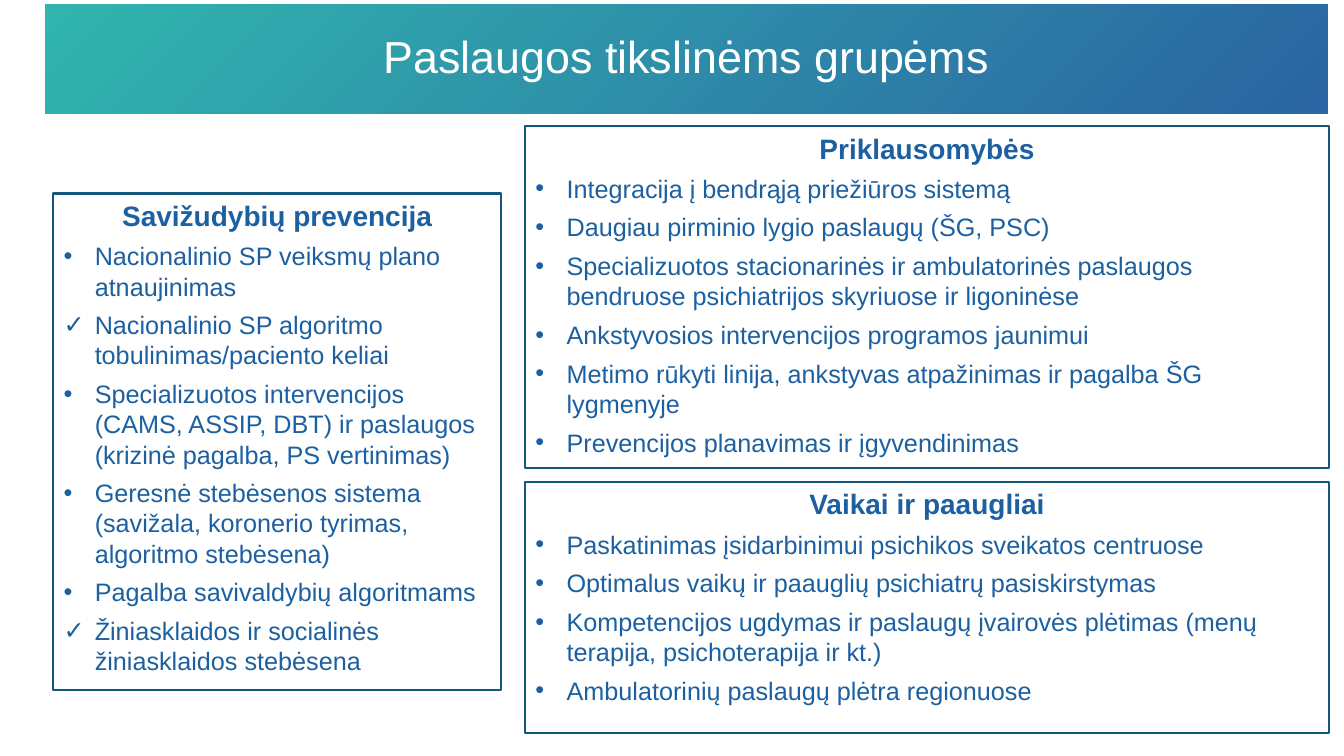
from dataclasses import dataclass

from pptx import Presentation
from pptx.dml.color import RGBColor
from pptx.enum.text import MSO_ANCHOR, MSO_AUTO_SIZE, PP_ALIGN
from pptx.oxml import parse_xml
from pptx.oxml.ns import nsdecls, qn
from pptx.oxml.xmlchemy import OxmlElement
from pptx.shapes.placeholder import SlidePlaceholder
from pptx.slide import Slide
from pptx.text.text import _Paragraph as Paragraph
from pptx.util import Inches, Length, Pt


@dataclass(frozen=True)
class Theme:
    font: str = "Arial"
    paper: RGBColor = RGBColor.from_string("FEFFFE")
    text: RGBColor = RGBColor.from_string("1D60A1")
    border: RGBColor = RGBColor.from_string("15587D")
    banner_start: RGBColor = RGBColor.from_string("31B5AE")
    banner_end: RGBColor = RGBColor.from_string("2A64A2")
    title_size: Length = Pt(32)
    heading_size: Length = Pt(20)
    item_size: Length = Pt(18)
    border_width: Length = Pt(1.5)
    paragraph_gap: Length = Pt(6)
    hanging: Length = Inches(0.31)


@dataclass(frozen=True)
class Area:
    left: float
    top: float
    width: float
    height: float


@dataclass(frozen=True)
class Item:
    text: str
    mark: str = "•"


@dataclass(frozen=True)
class TargetGroup:
    heading: str
    area: Area
    items: tuple[Item, ...]
    filled: bool = False


THEME = Theme()
TITLE = "Paslaugos tikslinėms grupėms"
TITLE_AREA = Area(0.45, 0.04, 12.72, 1.09)
DONE = "✓"

TARGET_GROUPS = (
    TargetGroup("Savižudybių prevencija", Area(0.53, 1.92, 4.44, 4.93), (
        Item("Nacionalinio SP veiksmų plano atnaujinimas"),
        Item("Nacionalinio SP algoritmo tobulinimas/paciento keliai", DONE),
        Item("Specializuotos intervencijos (CAMS, ASSIP, DBT) ir paslaugos "
             "(krizinė pagalba, PS vertinimas)"),
        Item("Geresnė stebėsenos sistema (savižala, koronerio tyrimas, "
             "algoritmo stebėsena)"),
        Item("Pagalba savivaldybių algoritmams"),
        Item("Žiniasklaidos ir socialinės žiniasklaidos stebėsena", DONE),
    )),
    TargetGroup("Priklausomybės", Area(5.21, 1.25, 7.97, 3.39), (
        Item("Integracija į bendrąją priežiūros sistemą"),
        Item("Daugiau pirminio lygio paslaugų (ŠG, PSC)"),
        Item("Specializuotos stacionarinės ir ambulatorinės paslaugos "
             "bendruose psichiatrijos skyriuose ir ligoninėse"),
        Item("Ankstyvosios intervencijos programos jaunimui"),
        Item("Metimo rūkyti linija, ankstyvas atpažinimas ir pagalba ŠG lygmenyje"),
        Item("Prevencijos planavimas ir įgyvendinimas"),
    )),
    TargetGroup("Vaikai ir paaugliai", Area(5.21, 4.78, 7.97, 2.49), (
        Item("Paskatinimas įsidarbinimui psichikos sveikatos centruose"),
        Item("Optimalus vaikų ir paauglių psichiatrų pasiskirstymas"),
        Item("Kompetencijos ugdymas ir paslaugų įvairovės plėtimas "
             "(menų terapija, psichoterapija ir kt.)"),
        Item("Ambulatorinių paslaugų plėtra regionuose"),
    ), filled=True),
)


def place(placeholder: SlidePlaceholder, area: Area, anchor: MSO_ANCHOR) -> None:
    placeholder.left, placeholder.top = Inches(area.left), Inches(area.top)
    placeholder.width, placeholder.height = Inches(area.width), Inches(area.height)
    frame = placeholder.text_frame
    frame.word_wrap = True
    frame.auto_size = MSO_AUTO_SIZE.NONE
    frame.vertical_anchor = anchor


def format_runs(paragraph: Paragraph, size: Length, color: RGBColor,
                bold: bool = False) -> None:
    for run in paragraph.runs:
        run.font.name = THEME.font
        run.font.size = size
        run.font.bold = bold
        run.font.color.rgb = color


def set_bullet(paragraph: Paragraph, mark: str = "") -> None:
    """Give the paragraph a hanging mark, or no mark and no indent."""
    properties = paragraph._p.get_or_add_pPr()
    hanging = THEME.hanging if mark else 0
    properties.set("marL", str(hanging))
    properties.set("indent", str(-hanging))
    bullet = OxmlElement("a:buChar" if mark else "a:buNone")
    if mark:
        bullet.set("char", mark)
    properties.append(bullet)


def fill_banner(banner: SlidePlaceholder) -> None:
    """Fill with a gradient that spreads from the top left corner."""
    banner.fill.gradient()
    start, end = banner.fill.gradient_stops
    start.position, end.position = 0, 1
    start.color.rgb, end.color.rgb = THEME.banner_start, THEME.banner_end
    gradient = banner._element.spPr.find(qn("a:gradFill"))
    gradient.replace(gradient.find(qn("a:lin")), parse_xml(
        f'<a:path {nsdecls("a")} path="circle">'
        '<a:fillToRect r="100000" b="100000"/></a:path>'))


def draw_title(title: SlidePlaceholder) -> None:
    place(title, TITLE_AREA, MSO_ANCHOR.MIDDLE)
    fill_banner(title)
    title.text_frame.text = TITLE
    line = title.text_frame.paragraphs[0]
    line.alignment = PP_ALIGN.CENTER
    line.line_spacing = 0.9
    format_runs(line, THEME.title_size, THEME.paper)


def draw_group(body: SlidePlaceholder, group: TargetGroup) -> None:
    place(body, group.area, MSO_ANCHOR.TOP)
    body.line.color.rgb = THEME.border
    body.line.width = THEME.border_width
    if group.filled:
        body.fill.solid()
        body.fill.fore_color.rgb = THEME.paper
    else:
        body.fill.background()

    frame = body.text_frame
    frame.text = "\n".join([group.heading, *(item.text for item in group.items)])
    for paragraph in frame.paragraphs:
        paragraph.space_before = Pt(0)
        paragraph.space_after = THEME.paragraph_gap
    heading, *lines = frame.paragraphs
    heading.alignment = PP_ALIGN.CENTER
    set_bullet(heading)
    format_runs(heading, THEME.heading_size, THEME.text, bold=True)
    for line, item in zip(lines, group.items):
        line.alignment = PP_ALIGN.LEFT
        set_bullet(line, item.mark)
        format_runs(line, THEME.item_size, THEME.text)


def draw_slide(slide: Slide) -> None:
    slide.background.fill.solid()
    slide.background.fill.fore_color.rgb = THEME.paper
    title, *bodies = slide.placeholders
    draw_title(title)
    for body, group in zip(bodies, TARGET_GROUPS):
        draw_group(body, group)
    for spare in bodies[len(TARGET_GROUPS):]:
        spare.element.getparent().remove(spare.element)


def main() -> None:
    presentation = Presentation()
    presentation.slide_width = Inches(13.33)
    presentation.slide_height = Inches(7.5)
    comparison = presentation.slide_layouts.get_by_name("Comparison")
    draw_slide(presentation.slides.add_slide(comparison))
    presentation.save("out.pptx")


if __name__ == "__main__":
    main()
